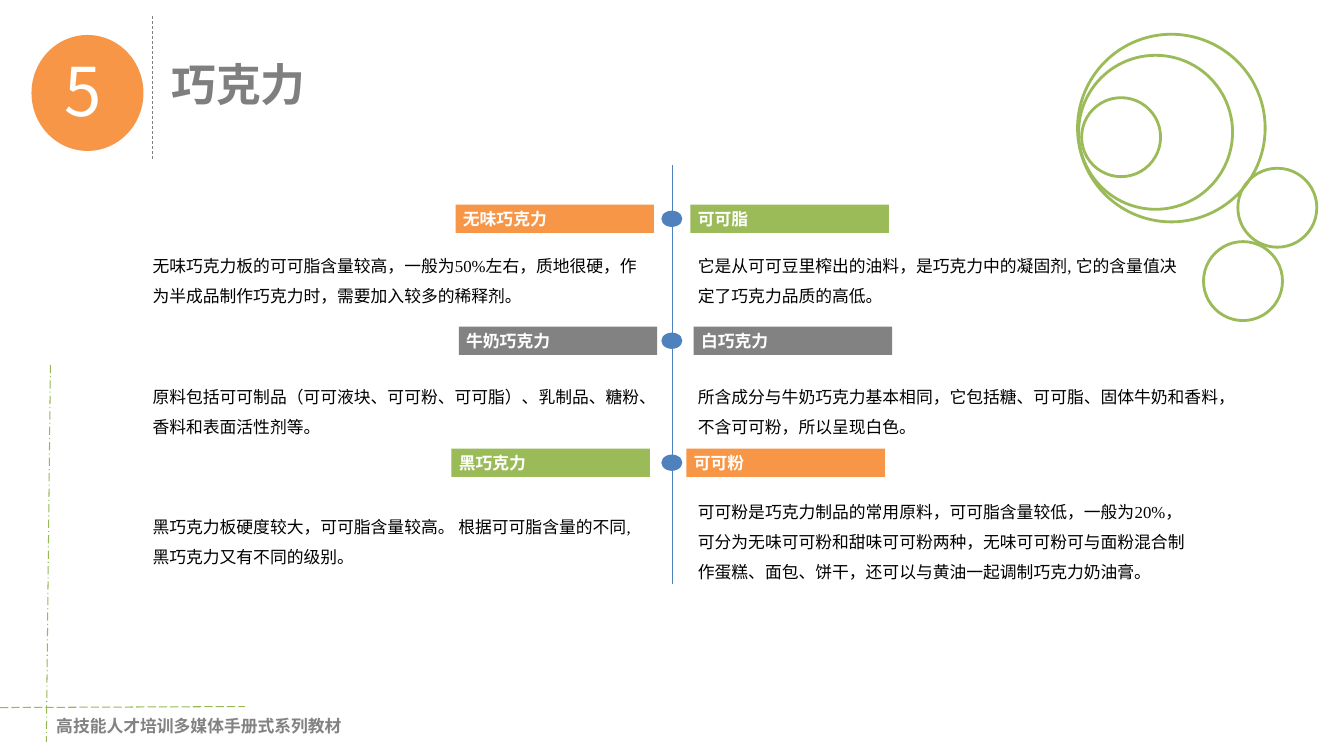
from lxml.etree import SubElement
from pptx import Presentation
from pptx.dml.color import RGBColor
from pptx.enum.dml import MSO_LINE_DASH_STYLE as Dash
from pptx.enum.shapes import MSO_CONNECTOR_TYPE as Connector, MSO_SHAPE as Shape
from pptx.enum.text import PP_ALIGN as Align
from pptx.oxml.ns import qn
from pptx.util import Pt

ORANGE, GREEN, GRAY, BLUE = "F79646", "9BBB59", "828282", "4F81BD"
WHITE, BLACK = "FFFFFF", "000000"
SERIF, SANS = "Times New Roman", "Noto Sans CJK SC"

ROW_TOP, ROW_PITCH = 146.2, 87.1
LABEL_LEFT, LABEL_RIGHT = 325.4, 493.2
BODY_LEFT, BODY_RIGHT = 103.7, 493.2

ROWS = [
    (0, ("无味巧克力", ORANGE, SANS), ("可可脂", GREEN, SERIF)),
    (2.3, ("牛奶巧克力", GRAY, SERIF), ("白巧克力", GRAY, SERIF)),
    (-2.9, ("黑巧克力", GREEN, SERIF), ("可可粉", ORANGE, SERIF)),
]

BODIES = [
    (BODY_LEFT, 172.8, 363, 49,
     "无味巧克力板的可可脂含量较高，一般为50%左右，质地很硬，作为半成品制作巧克力时，需要加入较多的稀释剂。"),
    (BODY_RIGHT, 172.8, 363.6, 49,
     "它是从可可豆里榨出的油料，是巧克力中的凝固剂, 它的含量值决定了巧克力品质的高低。"),
    (BODY_LEFT, 266.4, 363, 49,
     "原料包括可可制品（可可液块、可可粉、可可脂）、乳制品、糖粉、香料和表面活性剂等。"),
    (BODY_RIGHT, 266.4, 399, 49,
     "所含成分与牛奶巧克力基本相同，它包括糖、可可脂、固体牛奶和香料，不含可可粉，所以呈现白色。"),
    (BODY_LEFT, 359.3, 363, 49,
     "黑巧克力板硬度较大，可可脂含量较高。 根据可可脂含量的不同,黑巧克力又有不同的级别。"),
    (BODY_RIGHT, 348.5, 363.6, 70.6,
     "可可粉是巧克力制品的常用原料，可可脂含量较低，一般为20%，可分为无味可可粉和甜味可可粉两种，"
     "无味可可粉可与面粉混合制作蛋糕、面包、饼干，还可以与黄油一起调制巧克力奶油膏。"),
]

RINGS = [
    (769.7, 24.5, 134),
    (770.4, 39.5, 110),
    (884.2, 120.2, 56.4),
    (772.6, 69.8, 56.4),
    (859.7, 172.6, 56.4),
]


def color(value):
    return RGBColor.from_string(value)


def add_line(slide, start, end, line_color, width, dash=None):
    points = [Pt(value) for value in (*start, *end)]
    line = slide.shapes.add_connector(Connector.STRAIGHT, *points)
    line.line.color.rgb = color(line_color)
    line.line.width = Pt(width)
    if dash:
        line.line.dash_style = dash
    SubElement(line._element.spPr, qn("a:effectLst"))


def add_filled(slide, kind, box, fill):
    shape = slide.shapes.add_shape(kind, *map(Pt, box))
    shape.shadow.inherit = False
    shape.fill.solid()
    shape.fill.fore_color.rgb = color(fill)
    shape.line.fill.background()
    return shape


def add_ring(slide, left, top, size):
    ring = slide.shapes.add_shape(Shape.OVAL, Pt(left), Pt(top), Pt(size), Pt(size))
    ring.shadow.inherit = False
    ring.fill.background()
    ring.line.color.rgb = color(GREEN)
    ring.line.width = Pt(2)


def write(shape, text, size, text_color, font=SERIF, bold=False, insets=(7.2, 3.6),
          align=Align.LEFT, spacing=1, wrap=True):
    frame = shape.text_frame
    frame.word_wrap = wrap
    frame.margin_left = frame.margin_right = Pt(insets[0])
    frame.margin_top = frame.margin_bottom = Pt(insets[1])
    frame.text = text
    paragraph = frame.paragraphs[0]
    paragraph.alignment = align
    paragraph.line_spacing = spacing
    for run in paragraph.runs:
        run.font.size = Pt(size)
        run.font.bold = bold
        run.font.name = font
        run.font.color.rgb = color(text_color)
        SubElement(run._r.get_or_add_rPr(), qn("a:ea"), typeface=SANS)


def add_text(slide, box, text, size, text_color, **style):
    write(slide.shapes.add_textbox(*map(Pt, box)), text, size, text_color, **style)


def add_label(slide, left, top, text, fill, font):
    label = add_filled(slide, Shape.RECTANGLE, (left, top, 141.8, 20.2), fill)
    write(label, text, 12, WHITE, font=font, bold=True, insets=(5.3, 2.6),
          align=Align.JUSTIFY)


def add_frame(slide):
    add_line(slide, (36, 260.6), (33.1, 530), "98B955", 0.75, Dash.LONG_DASH_DOT)
    add_line(slide, (0, 505.4), (175, 504.7), "98B955", 0.75, Dash.LONG_DASH)
    add_text(slide, (33.1, 507.6, 220.3, 21.6), "高技能人才培训多媒体手册式系列教材",
             12, GRAY, bold=True, wrap=False)
    for ring in RINGS:
        add_ring(slide, *ring)


def add_heading(slide):
    add_line(slide, (108.7, 11.5), (108.7, 114.5), "808080", 0.5, Dash.DASH)
    add_filled(slide, Shape.OVAL, (22.5, 25, 80, 82.8), ORANGE)
    add_text(slide, (38.9, 31.7, 52.6, 65.5), "5", 48, WHITE, font=SANS)
    add_text(slide, (115.2, 36.7, 522, 46), "巧克力", 32, "7F7F7F", font=SANS, bold=True)


def add_timeline(slide):
    add_line(slide, (480.2, 118.1), (480.2, 416.9), BLUE, 0.5)
    for index, (shift, left_label, right_label) in enumerate(ROWS):
        top = ROW_TOP + index * ROW_PITCH
        add_label(slide, LABEL_LEFT + shift, top, *left_label)
        add_label(slide, LABEL_RIGHT + shift, top, *right_label)
        add_filled(slide, Shape.OVAL, (472.4, top + 4.3, 15, 11.6), BLUE)
    for *box, text in BODIES:
        add_text(slide, box, text, 12, BLACK, insets=(5.3, 2.6), spacing=1.5)


def main():
    presentation = Presentation()
    presentation.slide_width, presentation.slide_height = Pt(960), Pt(540)
    slide = presentation.slides.add_slide(presentation.slide_layouts[6])
    add_frame(slide)
    add_heading(slide)
    add_timeline(slide)
    presentation.save("out.pptx")


if __name__ == "__main__":
    main()
